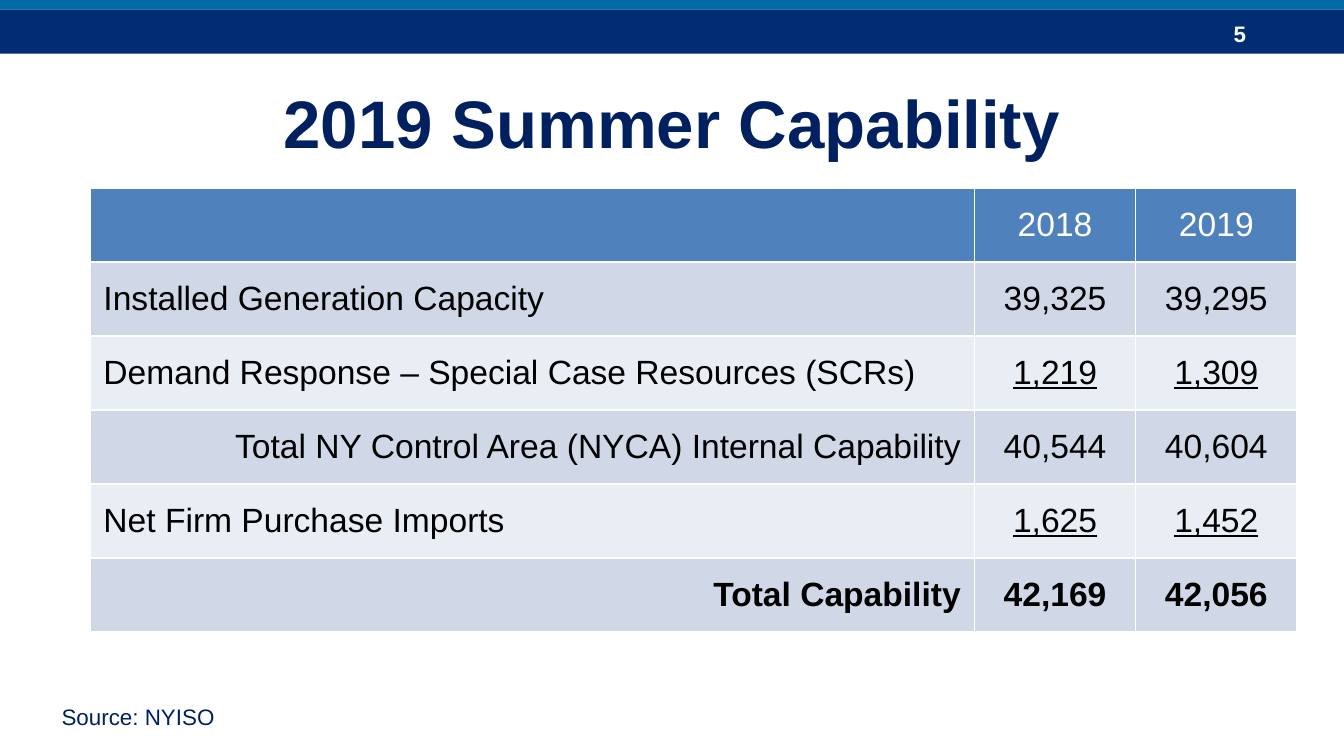
"""Build the 2019 summer capability slide."""
from dataclasses import dataclass

from lxml.etree import SubElement
from pptx import Presentation
from pptx.dml.color import RGBColor
from pptx.enum.shapes import MSO_SHAPE as Shape
from pptx.enum.text import MSO_ANCHOR as Anchor, PP_ALIGN as Align
from pptx.oxml.ns import qn
from pptx.slide import Slide
from pptx.table import _Cell as Cell
from pptx.text.text import _Paragraph as Paragraph
from pptx.util import Inches, Pt


@dataclass(frozen=True)
class Theme:
    font: str = "Arial"
    navy: str = "002D73"
    blue: str = "0069A6"
    ink: str = "002060"
    white: str = "FFFFFF"
    black: str = "000000"
    header: str = "4F81BD"
    bands: tuple[str, str] = ("D0D8E8", "E9EDF4")
    title_size: int = 36
    table_size: int = 18
    small_size: int = 12


@dataclass(frozen=True)
class Row:
    label: str
    values: tuple[str, str]
    align: Align = Align.LEFT
    underline: bool = False
    bold: bool = False


@dataclass(frozen=True)
class Label:
    text: str
    box: tuple[float, float, float, float]
    size: int
    color: str
    bold: bool = False
    align: Align = Align.LEFT
    anchor: Anchor = Anchor.TOP
    wrap: bool = True


THEME = Theme()
SLIDE_WIDTH = Inches(10)
SLIDE_HEIGHT = SLIDE_WIDTH * 9 // 16
BARS = (
    ((0, 0.07, 10, 0.33), THEME.navy),
    ((0, -0.02, 10, 0.09), THEME.blue),
)
LABELS = (
    Label("5", (9.08, 0.1, 0.75, 0.3), THEME.small_size, THEME.white, bold=True),
    Label("2019 Summer Capability", (0.5, 0.52, 9, 0.77), THEME.title_size,
          THEME.ink, bold=True, align=Align.CENTER, anchor=Anchor.MIDDLE),
    Label("Source: NYISO", (0.36, 5.18, 1.35, 0.3), THEME.small_size,
          THEME.ink, wrap=False),
)
ROWS = (
    Row("", ("2018", "2019")),
    Row("Installed Generation Capacity", ("39,325", "39,295")),
    Row("Demand Response – Special Case Resources (SCRs)", ("1,219", "1,309"),
        underline=True),
    Row("Total NY Control Area (NYCA) Internal Capability", ("40,544", "40,604"),
        align=Align.RIGHT),
    Row("Net Firm Purchase Imports", ("1,625", "1,452"), underline=True),
    Row("Total Capability", ("42,169", "42,056"), align=Align.RIGHT, bold=True),
)
COLUMN_WIDTHS = (6.58, 1.2, 1.2)
ROW_HEIGHT = 0.55


def style(paragraph: Paragraph, size: int, color: str, bold: bool, align: Align) -> None:
    """Set the look of a whole paragraph."""
    paragraph.alignment = align
    font = paragraph.font
    font.name, font.size, font.bold = THEME.font, Pt(size), bold
    font.color.rgb = RGBColor.from_string(color)


def add_bar(slide: Slide, box: tuple[float, ...], color: str) -> None:
    """Draw a plain filled band."""
    shape = slide.shapes.add_shape(Shape.RECTANGLE, *map(Inches, box))
    shape.shadow.inherit = False
    shape.fill.solid()
    shape.fill.fore_color.rgb = RGBColor.from_string(color)
    shape.line.fill.background()


def add_label(slide: Slide, label: Label) -> None:
    """Draw one text box."""
    frame = slide.shapes.add_textbox(*map(Inches, label.box)).text_frame
    frame.word_wrap = label.wrap
    frame.vertical_anchor = label.anchor
    paragraph = frame.paragraphs[0]
    paragraph.text = label.text
    style(paragraph, label.size, label.color, label.bold, label.align)


def add_borders(cell: Cell) -> None:
    """Give a cell thin white borders."""
    properties = cell._tc.get_or_add_tcPr()
    for side in "LRTB":
        line = SubElement(properties, qn(f"a:ln{side}"), w=str(Pt(1)))
        fill = SubElement(line, qn("a:solidFill"))
        SubElement(fill, qn("a:srgbClr"), val=THEME.white)


def fill_cell(cell: Cell, text: str, row: Row, row_index: int, is_value: bool) -> None:
    """Write and style one table cell."""
    is_header = row_index == 0
    add_borders(cell)
    cell.fill.solid()
    cell.fill.fore_color.rgb = RGBColor.from_string(
        THEME.header if is_header else THEME.bands[(row_index - 1) % 2])
    cell.vertical_anchor = Anchor.MIDDLE
    cell.margin_left = cell.margin_right = Inches(0.1)
    cell.margin_top = cell.margin_bottom = Inches(0.04)
    paragraph = cell.text_frame.paragraphs[0]
    paragraph.text = text
    style(paragraph, THEME.table_size, THEME.white if is_header else THEME.black,
          row.bold, Align.CENTER if is_value else row.align)
    paragraph.font.underline = row.underline and is_value


def add_capability_table(slide: Slide) -> None:
    """Draw the table of capability by year."""
    table = slide.shapes.add_table(
        len(ROWS), len(COLUMN_WIDTHS), Inches(0.67), Inches(1.4),
        Inches(sum(COLUMN_WIDTHS)), Inches(ROW_HEIGHT * len(ROWS))).table
    for column, width in zip(table.columns, COLUMN_WIDTHS):
        column.width = Inches(width)
    for row_index, row in enumerate(ROWS):
        table.rows[row_index].height = Inches(ROW_HEIGHT)
        for column_index, text in enumerate((row.label, *row.values)):
            fill_cell(table.cell(row_index, column_index), text, row, row_index,
                      column_index > 0)


def main() -> None:
    """Assemble and save the slide."""
    presentation = Presentation()
    presentation.slide_width = SLIDE_WIDTH
    presentation.slide_height = SLIDE_HEIGHT
    slide = presentation.slides.add_slide(presentation.slide_layouts[6])
    for box, color in BARS:
        add_bar(slide, box, color)
    for label in LABELS:
        add_label(slide, label)
    add_capability_table(slide)
    presentation.save("out.pptx")


if __name__ == "__main__":
    main()
